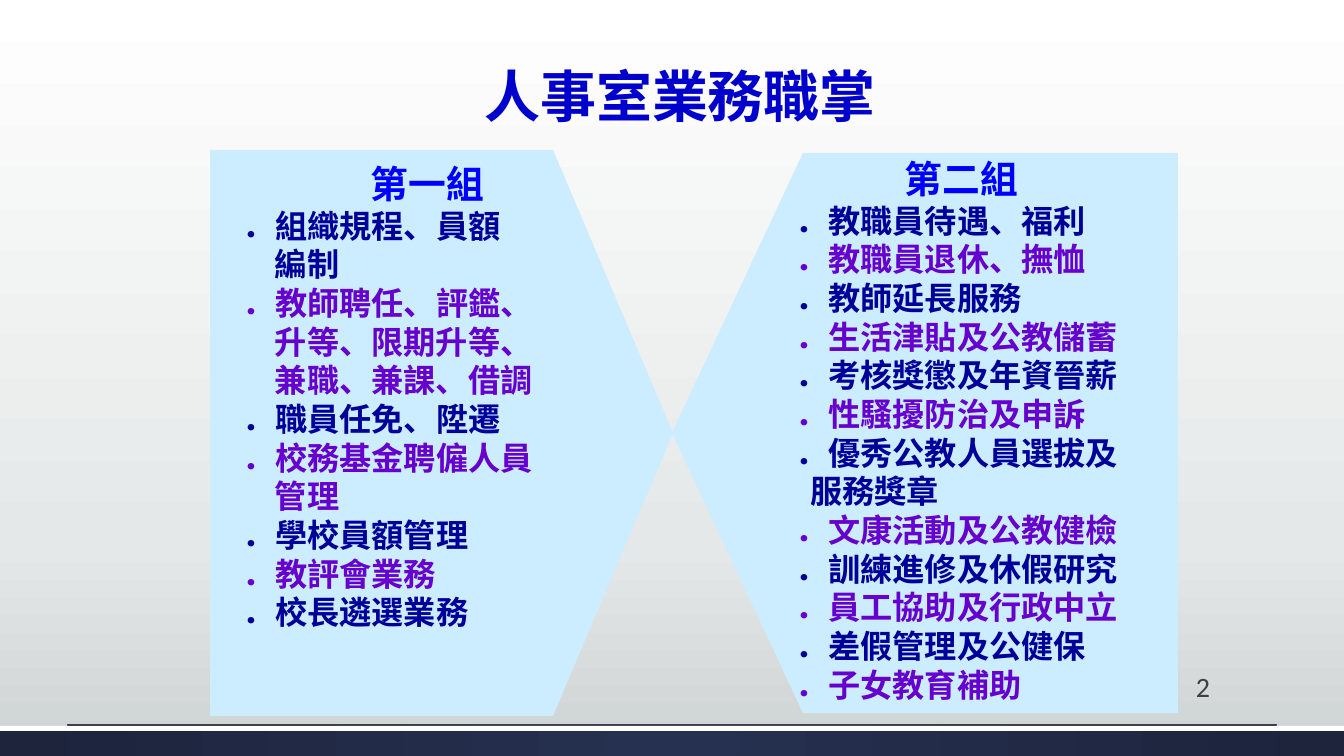
from dataclasses import dataclass

from lxml import etree
from pptx import Presentation
from pptx.dml.color import RGBColor
from pptx.enum.shapes import MSO_CONNECTOR, MSO_SHAPE
from pptx.enum.text import MSO_ANCHOR, PP_ALIGN
from pptx.oxml.ns import qn
from pptx.util import Pt

RECT, LINE = MSO_SHAPE.RECTANGLE, MSO_CONNECTOR.STRAIGHT
CENTER, LEFT = PP_ALIGN.CENTER, PP_ALIGN.LEFT
BOTTOM = MSO_ANCHOR.BOTTOM
SCALE = 914400 / 100.8  # EMU per px
WIDE, HIGH = 1344, 756
FLOOR = 726
CJK = "Noto Sans CJK SC"
HEX = {
    "title": "0000CC", "head": "0000FF", "navy": "000099", "violet": "6600CC",
    "panel": "CCECFF", "gray": "404040", "white": "FFFFFF", "bar": "1D243C",
}
SKY = [(0, "FFFFFF"), (72, "E5E8E8"), (100, "CDD2D2")]
NIGHT = [(0, "263050"), (100, "1D243C")]


@dataclass
class Panel:
    points: list[tuple[int, int]]
    box: tuple[int, int, int, int]
    first: int  # start of an item's first line
    hang: int  # start of its further lines
    head: str
    items: list[str]


PANELS = [
    Panel([(1178, 153), (803, 153), (672, 433), (803, 713), (1178, 713)],
          (789, 153, 345, 514), 7, 21, "第二組",
          ["教職員待遇、福利", "教職員退休、撫恤", "教師延長服務",
           "生活津貼及公教儲蓄", "考核獎懲及年資晉薪", "性騷擾防治及申訴",
           "優秀公教人員選拔及\v服務獎章", "文康活動及公教健檢",
           "訓練進修及休假研究", "員工協助及行政中立", "差假管理及公健保",
           "子女教育補助"]),
    Panel([(210, 150), (553, 150), (673, 433), (553, 716), (210, 716)],
          (243, 158, 369, 542), 0, 32, "第一組",
          ["組織規程、員額\v編制",
           "教師聘任、評鑑、\v升等、限期升等、\v兼職、兼課、借調",
           "職員任免、陞遷", "校務基金聘僱人員\v管理", "學校員額管理",
           "教評會業務", "校長遴選業務"]),
]


def px(n: int) -> int:
    return round(n * SCALE)


def rgb(name: str) -> RGBColor:
    return RGBColor.from_string(HEX[name])


def shade(fill, root, stops) -> None:
    """Fill with a downward gradient of any number of stops."""
    fill.gradient()
    fill.gradient_angle = 270
    row = root.find(".//" + qn("a:gsLst"))
    row[:] = []
    for pos, tone in stops:
        stop = etree.SubElement(row, qn("a:gs"), pos=str(pos * 1000))
        etree.SubElement(stop, qn("a:srgbClr"), val=tone)


def glow(root) -> None:
    """Turn a straight gradient into a round one."""
    lin = root.find(".//" + qn("a:lin"))
    ring = etree.Element(qn("a:path"))
    ring.set("path", "circle")
    etree.SubElement(ring, qn("a:fillToRect"),
                     {side: "50000" for side in "ltrb"})
    lin.getparent().replace(lin, ring)


def style(para, size: int, tone: str, face: str = CJK, bold: bool = True,
          align=LEFT) -> None:
    para.alignment = align
    font = para.font
    font.size, font.bold, font.name = Pt(size), bold, face
    font.color.rgb = rgb(tone)
    latin = para._p.find(".//" + qn("a:latin"))
    east = etree.Element(qn("a:ea"), typeface=face)
    latin.addnext(east)


def band(slide, top: int, height: int, tone: str):
    bar = slide.shapes.add_shape(RECT, 0, px(top), px(WIDE), px(height))
    bar.shadow.inherit = False
    bar.fill.solid()
    bar.fill.fore_color.rgb = rgb(tone)
    bar.line.fill.background()
    return bar


def draw(slide, panel: Panel) -> None:
    pen = slide.shapes.build_freeform(*panel.points[0], scale=SCALE)
    pen.add_line_segments(panel.points[1:], close=True)
    shape = pen.convert_to_shape()
    shape.shadow.inherit = False
    shape.fill.solid()
    shape.fill.fore_color.rgb = rgb("panel")
    shape.line.fill.background()


def write(slide, panel: Panel) -> None:
    frame = slide.shapes.add_textbox(*map(px, panel.box)).text_frame
    frame.word_wrap = True
    frame.margin_left = frame.margin_right = 0
    frame.margin_top = frame.margin_bottom = 0
    head = frame.paragraphs[0]
    head.text = panel.head
    head.line_spacing = Pt(34.3)
    style(head, 27, "head", align=CENTER)
    for i, item in enumerate(panel.items):
        para = frame.add_paragraph()
        para.text = "．" + item
        para.line_spacing = Pt(27.6)
        style(para, 23, ("navy", "violet")[i % 2])
        props = para._p.get_or_add_pPr()
        props.set("marL", str(px(panel.hang)))
        props.set("indent", str(px(panel.first - panel.hang)))


def main() -> None:
    deck = Presentation()
    deck.slide_width, deck.slide_height = px(WIDE), px(HIGH)
    slide = deck.slides.add_slide(deck.slide_layouts[5])

    # Background and foot
    shade(slide.background.fill, slide.element, SKY)
    bar = band(slide, FLOOR, HIGH - FLOOR, "bar")
    shade(bar.fill, bar.element, NIGHT)
    glow(bar.element)
    band(slide, FLOOR, 5, "white")
    rule = slide.shapes.add_connector(LINE, px(67), px(725), px(1277), px(725))
    rule.line.width = Pt(0.75)
    rule.line.color.rgb = rgb("gray")
    etree.SubElement(rule.element.spPr, qn("a:effectLst"))

    # Title
    title = slide.shapes.title
    title.left, title.top, title.width, title.height = map(
        px, (156, 39, 1048, 96))
    title.text_frame.text = "人事室業務職掌"
    title.text_frame.vertical_anchor = BOTTOM
    para = title.text_frame.paragraphs[0]
    para.line_spacing = 0.9
    style(para, 40, "title", align=CENTER)

    # Facing panels
    for panel in PANELS:
        draw(slide, panel)
    for panel in reversed(PANELS):
        write(slide, panel)

    # Page number
    page = slide.shapes.add_textbox(*map(px, (1186, 665, 64, 44)))
    page.text_frame.word_wrap = True
    page.text_frame.text = "2"
    style(page.text_frame.paragraphs[0], 20, "gray", "Calibri", False)

    deck.save("out.pptx")


if __name__ == "__main__":
    main()
